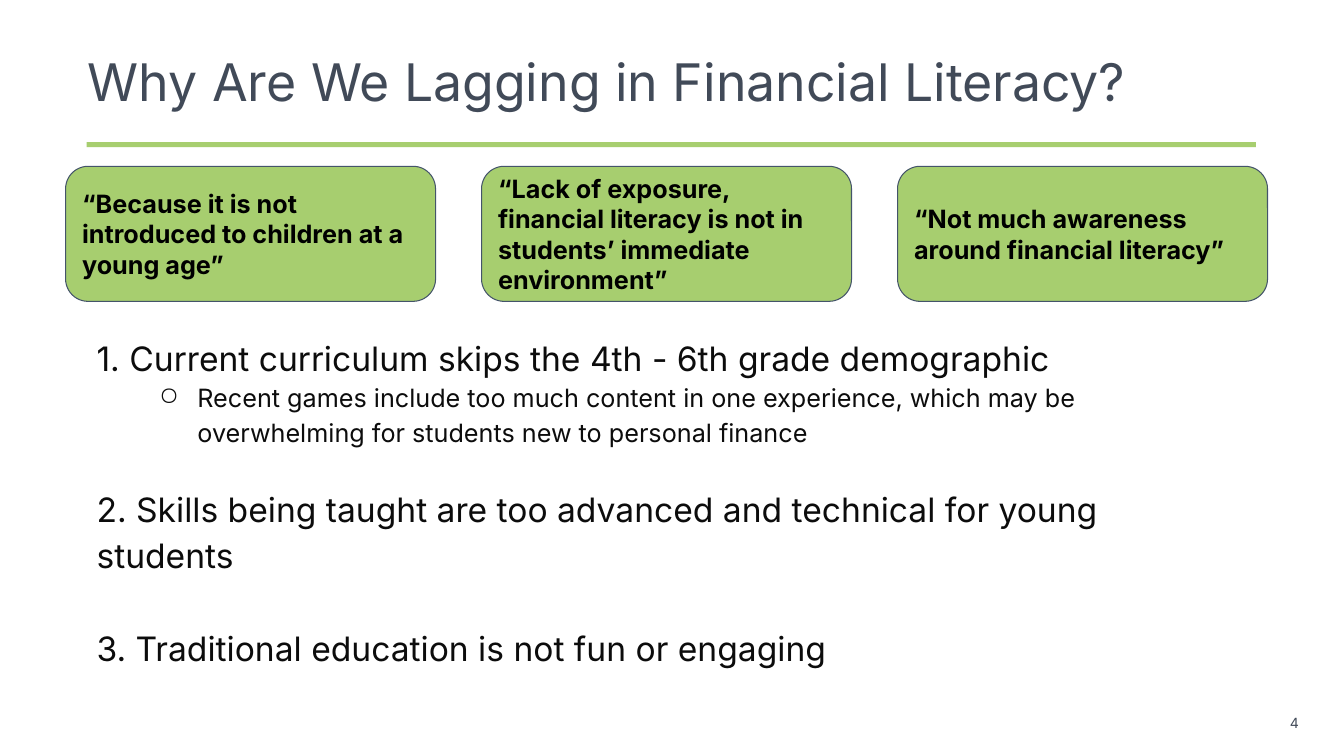
from dataclasses import dataclass

from lxml import etree
from pptx import Presentation
from pptx import util as u
from pptx.dml.color import RGBColor
from pptx.enum import shapes, text
from pptx.oxml import ns

SLIDE_WIDTH = u.Inches(13.33)
SLIDE_HEIGHT = u.Inches(7.5)


@dataclass(frozen=True)
class Theme:
    font: str = "Inter"
    green: str = "A7CE6F"
    outline: str = "44546A"
    heading: str = "414A58"
    body: str = "0C0C0C"
    quote: str = "000000"
    title_size: float = 37
    point_size: float = 24
    detail_size: float = 18
    number_size: float = 10


THEME = Theme()

QUOTES = [
    "“Because it is not introduced to children at a young age”",
    "“Lack of exposure, financial literacy is not in students’ immediate environment”",
    "“Not much awareness around financial literacy”",
]

# Text, whether it is a bulleted detail, and space before in points
REASONS = [
    ("1. Current curriculum skips the 4th - 6th grade demographic", False, 0),
    ("Recent games include too much content in one experience, which may be "
     "overwhelming for students new to personal finance", True, 0),
    ("2. Skills being taught are too advanced and technical for young students", False, 25),
    ("3. Traditional education is not fun or engaging", False, 33.4),
]


def area(left, top, width, height):
    """Turn percentages of the slide's size into lengths."""
    return (int(SLIDE_WIDTH * left / 100), int(SLIDE_HEIGHT * top / 100),
            int(SLIDE_WIDTH * width / 100), int(SLIDE_HEIGHT * height / 100))


def write(paragraph, words, size, color, bold=False):
    paragraph.text = words
    for run in paragraph.runs:
        run.font.name = THEME.font
        run.font.size = u.Pt(size)
        run.font.bold = bold
        run.font.color.rgb = RGBColor.from_string(color)


def prepare_frame(shape, anchor, vertical_inset):
    frame = shape.text_frame
    frame.word_wrap = True
    frame.vertical_anchor = anchor
    frame.margin_left = frame.margin_right = u.Inches(0.1)
    frame.margin_top = frame.margin_bottom = u.Inches(vertical_inset)
    return frame


def add_text(slide, place, anchor=text.MSO_ANCHOR.TOP, vertical_inset=0.05):
    return prepare_frame(slide.shapes.add_textbox(*place), anchor, vertical_inset)


def add_green_shape(slide, kind, place):
    shape = slide.shapes.add_shape(kind, *place)
    shape.shadow.inherit = False
    shape.fill.solid()
    shape.fill.fore_color.rgb = RGBColor.from_string(THEME.green)
    shape.line.fill.background()
    return shape


def add_quote(slide, place, words):
    card = add_green_shape(slide, shapes.MSO_SHAPE.ROUNDED_RECTANGLE, place)
    card.line.color.rgb = RGBColor.from_string(THEME.outline)
    card.line.width = u.Pt(0.75)
    paragraph = prepare_frame(card, text.MSO_ANCHOR.MIDDLE, 0.1).paragraphs[0]
    paragraph.alignment = text.PP_ALIGN.LEFT
    write(paragraph, words, THEME.detail_size, THEME.quote, bold=True)


def add_bullet(paragraph):
    paragraph.level = 1
    properties = paragraph._p.get_or_add_pPr()
    properties.set("marL", str(u.Inches(1)))
    properties.set("indent", str(u.Inches(-0.38)))
    color = etree.SubElement(properties, ns.qn("a:buClr"))
    etree.SubElement(color, ns.qn("a:srgbClr"), val=THEME.body)
    etree.SubElement(properties, ns.qn("a:buChar"), char="○")


def add_reasons(slide, place):
    frame = add_text(slide, place, vertical_inset=0.1)
    for index, (words, is_detail, space) in enumerate(REASONS):
        paragraph = frame.add_paragraph() if index else frame.paragraphs[0]
        if is_detail:
            add_bullet(paragraph)
        paragraph.line_spacing = 1.15
        paragraph.space_before = u.Pt(space)
        size = THEME.detail_size if is_detail else THEME.point_size
        write(paragraph, words, size, THEME.body)


def main():
    presentation = Presentation()
    presentation.slide_width = SLIDE_WIDTH
    presentation.slide_height = SLIDE_HEIGHT
    slide = presentation.slides.add_slide(presentation.slide_layouts[6])

    add_green_shape(slide, shapes.MSO_SHAPE.RECTANGLE, area(6.45, 18.8, 87, 0.67))

    title = add_text(slide, area(5.78, 6.8, 86.8, 17.87)).paragraphs[0]
    title.line_spacing = 0.9
    write(title, "Why Are We Lagging in Financial Literacy?", THEME.title_size, THEME.heading)

    number = add_text(slide, area(70.6, 92.93, 26.78, 5.33), text.MSO_ANCHOR.MIDDLE).paragraphs[0]
    number.alignment = text.PP_ALIGN.RIGHT
    write(number, "4", THEME.number_size, THEME.heading)

    add_reasons(slide, area(6.45, 42.53, 86.2, 50))

    for column, words in enumerate(QUOTES):
        add_quote(slide, area(4.88 + 30.95 * column, 22, 27.53, 17.87), words)

    presentation.save("out.pptx")


if __name__ == "__main__":
    main()
